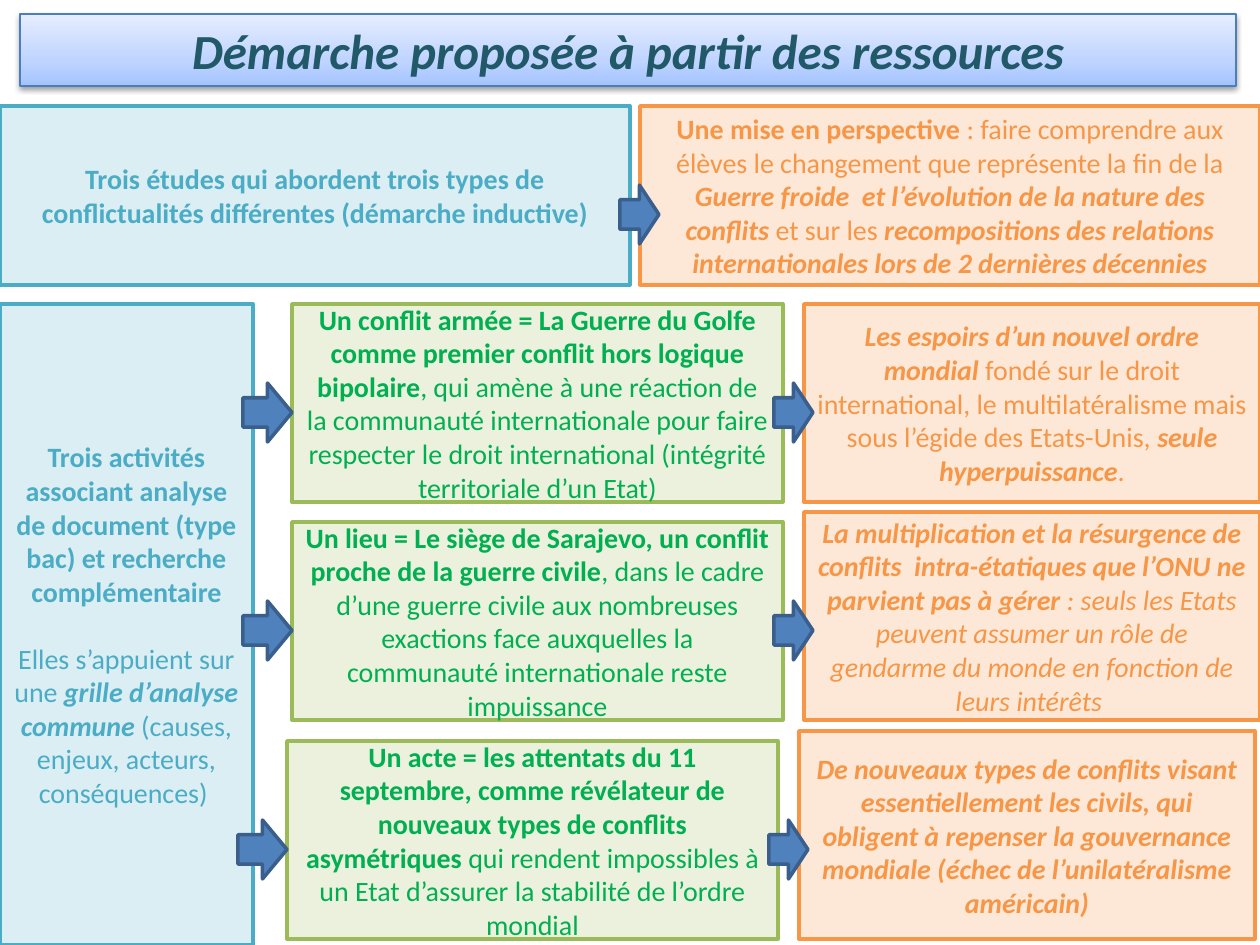
from copy import deepcopy

from lxml.etree import SubElement
from pptx import Presentation
from pptx.dml.color import RGBColor
from pptx.enum.shapes import MSO_SHAPE as Shape
from pptx.enum.text import MSO_ANCHOR as Anchor, MSO_AUTO_SIZE as AutoSize, PP_ALIGN as Align
from pptx.oxml.ns import qn
from pptx.util import Emu, Pt

SCALE = 914400 / 126
BLUE, GREEN, ORANGE = "4BACC6", "9BBB59", "F79646"
GREEN_TEXT = "00B050"
hex_color = RGBColor.from_string


def px(*lengths):
    return [Emu(round(length * SCALE)) for length in lengths]


def write(para, runs, size, color):
    para.alignment = Align.CENTER
    for text, style in runs:
        span = para.add_run()
        span.text = text
        span.font.name = "Calibri"
        span.font.size = Pt(size)
        span.font.bold = "b" in style
        span.font.italic = "i" in style
        span.font.color.rgb = hex_color(color)


deck = Presentation()
deck.slide_width, deck.slide_height = px(1260, 945)
page = deck.slides.add_slide(deck.slide_layouts[5])

title = page.shapes.title
title.left, title.top, title.width, title.height = px(20, 14, 1216, 72)
title.fill.gradient()
title.fill.gradient_angle = 90
stop_list = title.element.spPr.find(".//" + qn("a:gsLst"))
stop_list.insert(1, deepcopy(stop_list[0]))
gradient = [(0, "A4C4FF"), (0.35, "BFD4FF"), (1, "E6EEFF")]
for stop, (position, color) in zip(title.fill.gradient_stops, gradient):
    stop.position = position
    stop.color.rgb = hex_color(color)
title.line.color.rgb = hex_color("4B7EBC")
title.line.width = Pt(0.75)
effects = SubElement(title.element.spPr, qn("a:effectLst"))
shadow = SubElement(effects, qn("a:outerShdw"), blurRad=str(Pt(3.1)), dist=str(Pt(1.6)),
                    dir="5400000", rotWithShape="0")
shade = SubElement(shadow, qn("a:srgbClr"), val="000000")
SubElement(shade, qn("a:alpha"), val="38000")
title.text_frame.auto_size = AutoSize.NONE
title.text_frame.vertical_anchor = Anchor.MIDDLE
write(title.text_frame.paragraphs[0],
      [("Démarche proposée à partir des ressources", "bi")], 28, "215968")

studies = [[("Trois études qui abordent trois types de conflictualités différentes "
             "(démarche inductive)", "b")]]
perspective = [[
    ("Une mise en perspective ", "b"),
    (": faire comprendre aux élèves le changement que représente la fin de la ", ""),
    ("Guerre froide  et l’évolution de la nature des conflits ", "bi"),
    ("et sur les ", ""),
    ("recompositions des relations internationales lors de 2 dernières décennies", "bi"),
]]
activities = [
    [("Trois activités associant analyse de document (type bac) et recherche complémentaire", "b")],
    [("Elles s’appuient sur une ", ""), ("grille d’analyse commune ", "bi"),
     ("(causes, enjeux, acteurs, conséquences) ", "")],
]
cases = [
    [("Un conflit armée = La Guerre du Golfe comme premier conflit hors logique bipolaire", "b"),
     (", qui amène à une réaction de la communauté internationale pour faire respecter "
      "le droit international (intégrité territoriale d’un Etat)", "")],
    [("Un lieu = Le siège de Sarajevo, un conflit proche de la guerre civile", "b"),
     (", dans le cadre d’une guerre civile aux nombreuses exactions face auxquelles "
      "la communauté internationale reste impuissance", "")],
    [("Un acte = les attentats du 11 septembre, comme révélateur de nouveaux types "
      "de conflits asymétriques ", "b"),
     ("qui rendent impossibles à un Etat d’assurer la stabilité de l’ordre mondial", "")],
]
lessons = [
    [("Les espoirs d’un nouvel ordre mondial ", "bi"),
     ("fondé sur le droit international, le multilatéralisme mais sous l’égide des Etats-Unis, ", ""),
     ("seule hyperpuissance", "bi"), (".", "")],
    [("La multiplication et la résurgence de conflits  intra-étatiques que l’ONU "
      "ne parvient pas à gérer ", "bi"),
     (": seuls les Etats peuvent assumer un rôle de gendarme du monde en fonction "
      "de leurs intérêts ", "i")],
    [("De nouveaux types de conflits visant essentiellement les civils, qui obligent "
      "à repenser la gouvernance mondiale (échec de l’unilatéralisme américain)", "bi")],
]

boxes = [
    ((0, 106, 630, 179), BLUE, BLUE, studies),
    ((640, 106, 620, 179), ORANGE, ORANGE, perspective),
    ((0, 304, 253, 641), BLUE, BLUE, activities),
]
arrows = [(620, 185, 39, 59)]
rows = zip([304, 522, 741], [0, 0, -5], [0, 10, 10], cases, lessons)
for top, shift, rise, case, lesson in rows:
    boxes.append(((292 + shift, top, 491, 198), GREEN, GREEN_TEXT, [case]))
    boxes.append(((804 + shift, top - rise, 456, 198 + rise), ORANGE, ORANGE, [lesson]))
    arrows.append((243 + shift, top + 79, 49, 59))
    arrows.append((774 + shift, top + 79, 39, 59))

for area, color, text_color, paragraphs in boxes:
    box = page.shapes.add_shape(Shape.RECTANGLE, *px(*area))
    box.shadow.inherit = False
    box.fill.solid()
    box.fill.fore_color.rgb = hex_color(color)
    tint = box.element.spPr.find(qn("a:solidFill")).find(qn("a:srgbClr"))
    SubElement(tint, qn("a:alpha"), val="21000" if color == ORANGE else "20000")
    box.line.color.rgb = hex_color(color)
    box.line.width = Pt(2)
    frame = box.text_frame
    frame.word_wrap = True
    frame.vertical_anchor = Anchor.MIDDLE
    for index, runs in enumerate(paragraphs):
        para = frame.add_paragraph() if index else frame.paragraphs[0]
        if index:
            para.space_before = Pt(19)
        write(para, runs, 16, text_color)

for area in arrows:
    arrow = page.shapes.add_shape(Shape.RIGHT_ARROW, *px(*area))
    arrow.shadow.inherit = False
    arrow.fill.solid()
    arrow.fill.fore_color.rgb = hex_color("4F81BD")
    arrow.line.color.rgb = hex_color("3A5F8C")
    arrow.line.width = Pt(2)

deck.save("out.pptx")
